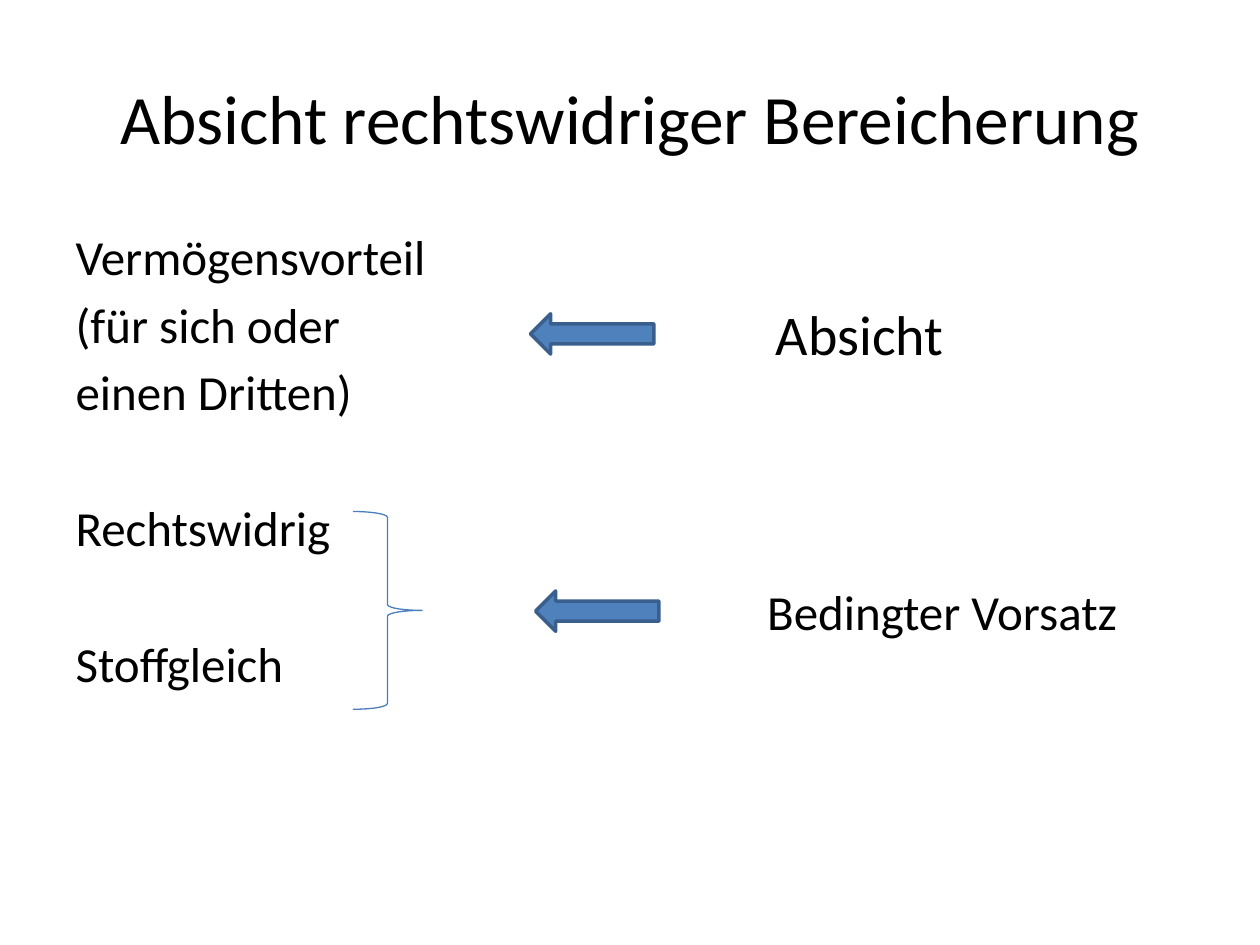
import pptx
import pptx.util
import pptx.dml.color
import pptx.enum.shapes
import pptx.enum.text
import lxml.etree

SHAPE = pptx.enum.shapes.MSO_SHAPE
ALIGN = pptx.enum.text.PP_ALIGN
ANCHOR = pptx.enum.text.MSO_ANCHOR

prs = pptx.Presentation()
prs.slide_width = pptx.util.Inches(10)
prs.slide_height = pptx.util.Inches(7.5)
col = prs.slide_width / 100
row = prs.slide_height / 75
slide = prs.slides.add_slide(prs.slide_layouts[1])


def grid(left, top, width, height):
    return int(left * col), int(top * row), int(width * col), int(height * row)


def write(p, text, size=28, color="000000", align=ALIGN.LEFT, before=0):
    p.alignment = align
    p.space_before = pptx.util.Pt(before)
    r = p.add_run()
    r.text = text
    r.font.size = pptx.util.Pt(size)
    r.font.name = "Calibri"
    r.font.color.rgb = pptx.dml.color.RGBColor.from_string(color)


title = slide.shapes.title
title.left, title.top, title.width, title.height = grid(5, 3, 90, 12.5)
title.text_frame.vertical_anchor = ANCHOR.MIDDLE
write(title.text_frame.paragraphs[0], "Absicht rechtswidriger Bereicherung",
      size=39.6, align=ALIGN.CENTER)

body = slide.placeholders[1]
body.left, body.top, body.width, body.height = grid(5, 17.5, 90, 49.5)
tf = body.text_frame
items = [
    ("Vermögensvorteil", 0),
    ("(für sich oder", 5),
    ("einen Dritten)", 5),
    ("Rechtswidrig", 44),
    ("Stoffgleich", 44),
]
for i, (text, before) in enumerate(items):
    p = tf.add_paragraph() if i else tf.paragraphs[0]
    write(p, text, before=before)
    pPr = p._p.get_or_add_pPr()
    pPr.set("marL", "0")
    pPr.set("indent", "0")
    lxml.etree.SubElement(pPr, pptx.oxml.ns.qn("a:buNone"))

shapes = [
    (SHAPE.LEFT_ARROW, (42.1, 24.9, 9.8, 3.2), "4F81BD", "3A5F8C", 2),
    (SHAPE.RIGHT_BRACE, (28, 40.6, 5.5, 15.7), None, "4B7EBC", 0.75),
    (SHAPE.LEFT_ARROW, (42.5, 46.9, 9.8, 3.2), "4F81BD", "3A5F8C", 2),
]
for kind, place, fill, line, width in shapes:
    sp = slide.shapes.add_shape(kind, *grid(*place))
    sp.shadow.inherit = False
    if fill:
        sp.fill.solid()
        sp.fill.fore_color.rgb = pptx.dml.color.RGBColor.from_string(fill)
    else:
        sp.fill.background()
    sp.line.color.rgb = pptx.dml.color.RGBColor.from_string(line)
    sp.line.width = pptx.util.Pt(width)

labels = [
    ("Absicht", (60.6, 23.3, 21.7, 6.4), 32, True),
    ("Bedingter Vorsatz", (59.9, 45.7, 30.1, 5.7), 28, False),
]
for text, place, size, wrap in labels:
    tf = slide.shapes.add_textbox(*grid(*place)).text_frame
    tf.word_wrap = wrap
    tf.auto_size = pptx.enum.text.MSO_AUTO_SIZE.SHAPE_TO_FIT_TEXT
    write(tf.paragraphs[0], text, size=size)

prs.save("out.pptx")
